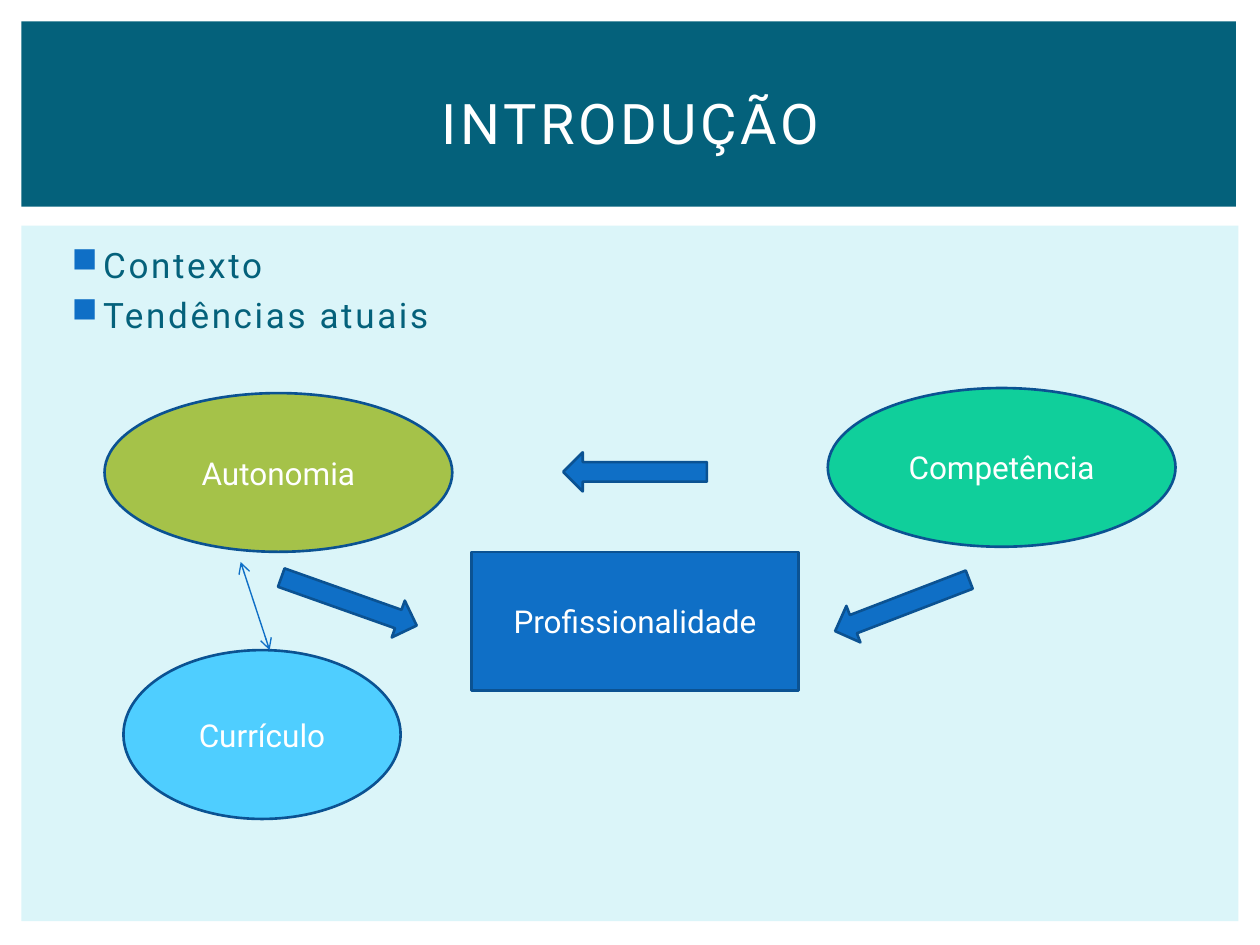
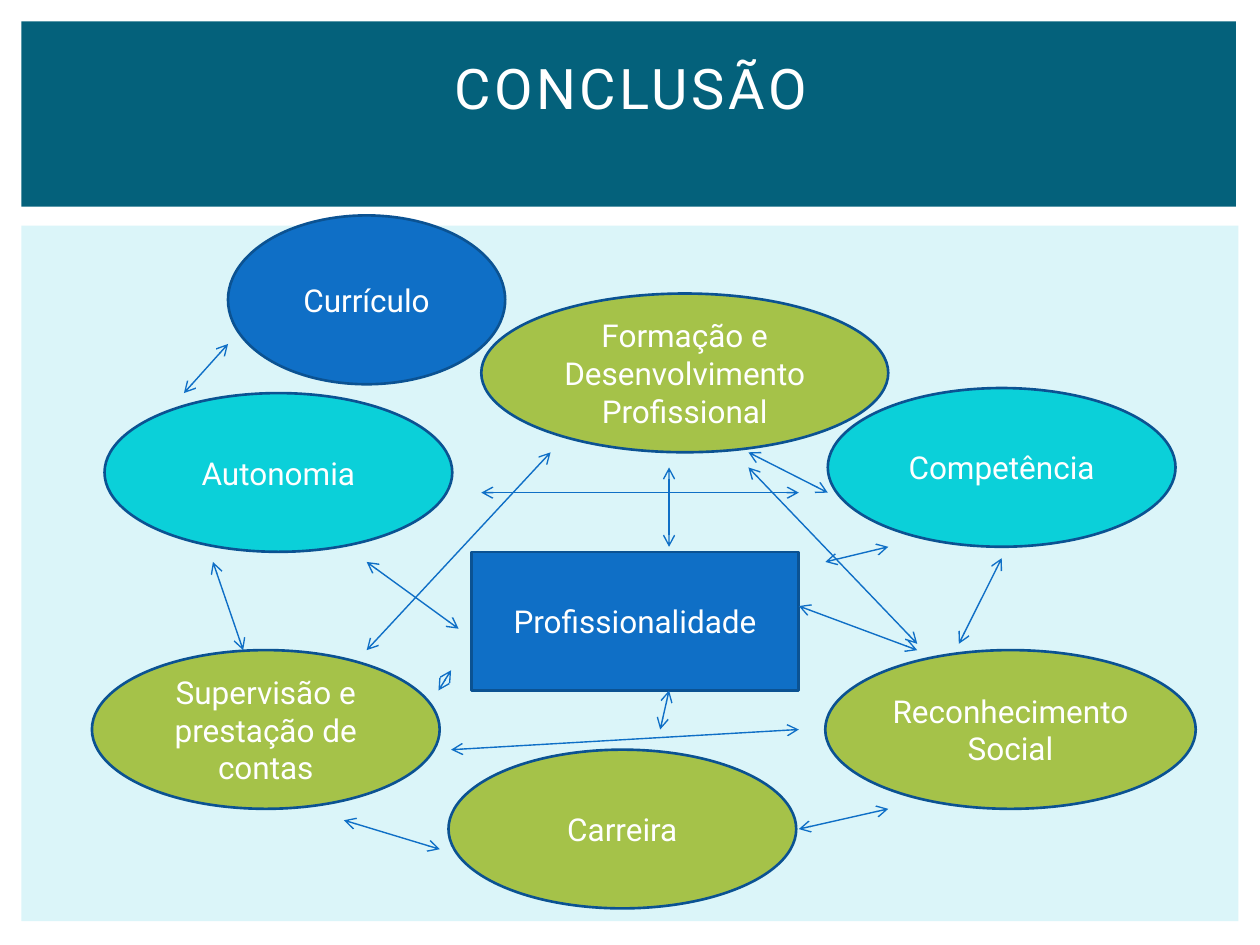
from lxml import etree
from pptx import Presentation
from pptx.dml.color import RGBColor
from pptx.enum import shapes, text
from pptx.oxml.ns import qn
from pptx.util import Inches, Pt

TEAL = RGBColor(0x04, 0x61, 0x7B)
PALE = RGBColor(0xDB, 0xF5, 0xF9)
BLUE = RGBColor(0x0F, 0x6F, 0xC6)
NAVY = RGBColor(0x0B, 0x52, 0x92)
GREEN = RGBColor(0xA5, 0xC2, 0x49)
MINT = RGBColor(0x10, 0xCF, 0x9B)
SKY = RGBColor(0x4F, 0xCE, 0xFF)
CYAN = RGBColor(0x0B, 0xD0, 0xD9)
WHITE = RGBColor(0xFF, 0xFF, 0xFF)

FONT = "Roboto"
SHAPE = shapes.MSO_SHAPE
OVAL = (2.76, 1.26)
SMALL_OVAL = (2.2, 1.34)
ARROW = (1.14, 0.31)

# Places that both slides share: left, top, width, height
CORE = (3.74, 4.38, 2.6, 1.1)
AUTONOMY = (0.83, 3.12, *OVAL)
COMPETENCE = (6.57, 3.08, *OVAL)

SLIDES = [
    {
        "title": "INTRODUÇÃO",
        "bullets": ["Contexto", "Tendências atuais"],
        "ovals": [
            ("Autonomia", AUTONOMY, GREEN),
            ("Competência", COMPETENCE, MINT),
            ("Currículo", (0.98, 5.16, *SMALL_OVAL), SKY),
        ],
        # left, top, rotation
        "arrows": [(2.2, 4.62, 19.5), (6.59, 4.65, 159), (4.47, 3.59, 180)],
        # start x, start y, end x, end y
        "links": [(1.91, 4.46, 2.14, 5.16)],
    },
    {
        "title": "CONCLUSÃO",
        "title_lift": 0.55,
        "ovals": [
            ("Autonomia", AUTONOMY, CYAN),
            ("Competência", COMPETENCE, CYAN),
            ("Currículo", (1.81, 1.71, *SMALL_OVAL), BLUE),
            ("Carreira", (3.56, 5.95, *OVAL), GREEN),
            ("Formação e Desenvolvimento Profissional", (3.82, 2.33, 3.23, 1.26), GREEN),
            ("Supervisão e prestação de contas", (0.73, 5.16, *OVAL), GREEN),
            ("Reconhecimento Social", (6.55, 5.16, 2.94, 1.26), GREEN),
        ],
        "links": [
            (1.69, 4.46, 1.93, 5.16),
            (7.95, 4.43, 7.61, 5.11),
            (6.34, 4.81, 7.28, 5.16),
            (6.55, 4.46, 7.05, 4.34),
            (3.82, 3.91, 6.34, 3.91),
            (2.91, 5.16, 4.37, 3.59),
            (1.46, 3.12, 1.81, 2.73),
            (7.05, 6.42, 6.34, 6.58),
            (5.31, 4.34, 5.31, 3.71),
            (5.31, 5.48, 5.24, 5.79),
            (3.64, 4.99, 2.91, 4.46),
            (2.73, 6.51, 3.49, 6.74),
            (5.94, 3.59, 6.57, 3.91),
            (5.94, 3.71, 7.28, 5.11),
            (3.58, 5.95, 6.34, 5.79),
            (3.58, 5.32, 3.48, 5.48),
        ],
    },
]


def inches(values):
    return [Inches(value) for value in values]


def write(para, words, size, color=WHITE, spacing=0):
    """Add one span of text; spacing is the letter spacing in points."""
    span = para.add_run()
    span.text = words
    for name, value in {"name": FONT, "size": Pt(size)}.items():
        setattr(span.font, name, value)
    span.font.color.rgb = color
    if spacing:
        span.font._element.set("spc", str(int(spacing * 100)))


def add_block(page, kind, place, fill, outline=None, label=None):
    block = page.shapes.add_shape(kind, *inches(place))
    block.shadow.inherit = False
    block.fill.solid()
    block.fill.fore_color.rgb = fill
    if outline is None:
        block.line.fill.background()
    else:
        block.line.color.rgb = outline
        block.line.width = Pt(1.5)
    if label:
        block.text_frame.word_wrap = True
        block.text_frame.vertical_anchor = text.MSO_ANCHOR.MIDDLE
        para = block.text_frame.paragraphs[0]
        para.alignment = text.PP_ALIGN.CENTER
        write(para, label, 18)
    return block


def add_title(page, title, lift):
    """Centre the title in the band; lift is extra room kept below it."""
    box = page.shapes.add_textbox(*inches((0.42, 0.39, 9.17, 1.15)))
    frame = box.text_frame
    settings = {
        "word_wrap": True,
        "vertical_anchor": text.MSO_ANCHOR.MIDDLE,
        "margin_bottom": Inches(0.05 + lift),
    }
    for name, value in settings.items():
        setattr(frame, name, value)
    para = frame.paragraphs[0]
    para.alignment = text.PP_ALIGN.CENTER
    write(para, title, 32, spacing=2)


def add_bullets(page, lines):
    frame = page.shapes.add_textbox(*inches((0.42, 1.88, 9.19, 4.82))).text_frame
    frame.word_wrap = True
    for index, line in enumerate(lines):
        para = frame.add_paragraph() if index else frame.paragraphs[0]
        para.space_before = Pt(4.6)
        props = para._p.get_or_add_pPr()
        props.set("marL", str(Inches(0.3)))
        props.set("indent", str(Inches(-0.25)))
        color = etree.SubElement(props, qn("a:buClr"))
        etree.SubElement(color, qn("a:srgbClr"), val=str(BLUE))
        etree.SubElement(props, qn("a:buChar"), char="■")
        write(para, line, 20, TEAL, spacing=1.5)


def add_link(page, ends):
    """Draw a thin line with an open arrowhead at both ends."""
    link = page.shapes.add_connector(shapes.MSO_CONNECTOR.STRAIGHT, *inches(ends))
    link.line.color.rgb = BLUE
    link.line.width = Pt(0.79)
    outline = link.line._get_or_add_ln()
    for end in ("a:headEnd", "a:tailEnd"):
        etree.SubElement(outline, qn(end), type="arrow")
    etree.SubElement(link._element.spPr, qn("a:effectLst"))


def build_page(deck, content):
    page = deck.slides.add_slide(deck.slide_layouts[6])
    add_block(page, SHAPE.RECTANGLE, (0.17, 1.79, 9.66, 5.52), PALE)
    add_block(page, SHAPE.RECTANGLE, (0.17, 0.17, 9.64, 1.47), TEAL)
    add_title(page, content["title"], content.get("title_lift", 0))
    if "bullets" in content:
        add_bullets(page, content["bullets"])
    add_block(page, SHAPE.RECTANGLE, CORE, BLUE, NAVY, "Profissionalidade")
    for label, place, fill in content["ovals"]:
        add_block(page, SHAPE.OVAL, place, fill, NAVY, label)
    for left, top, rotation in content.get("arrows", []):
        arrow = add_block(page, SHAPE.RIGHT_ARROW, (left, top, *ARROW), BLUE, NAVY)
        arrow.rotation = rotation
    for ends in content["links"]:
        add_link(page, ends)


def main():
    deck = Presentation()
    deck.slide_width, deck.slide_height = inches((10, 7.5))
    for content in SLIDES:
        build_page(deck, content)
    deck.save("out.pptx")


if __name__ == "__main__":
    main()
